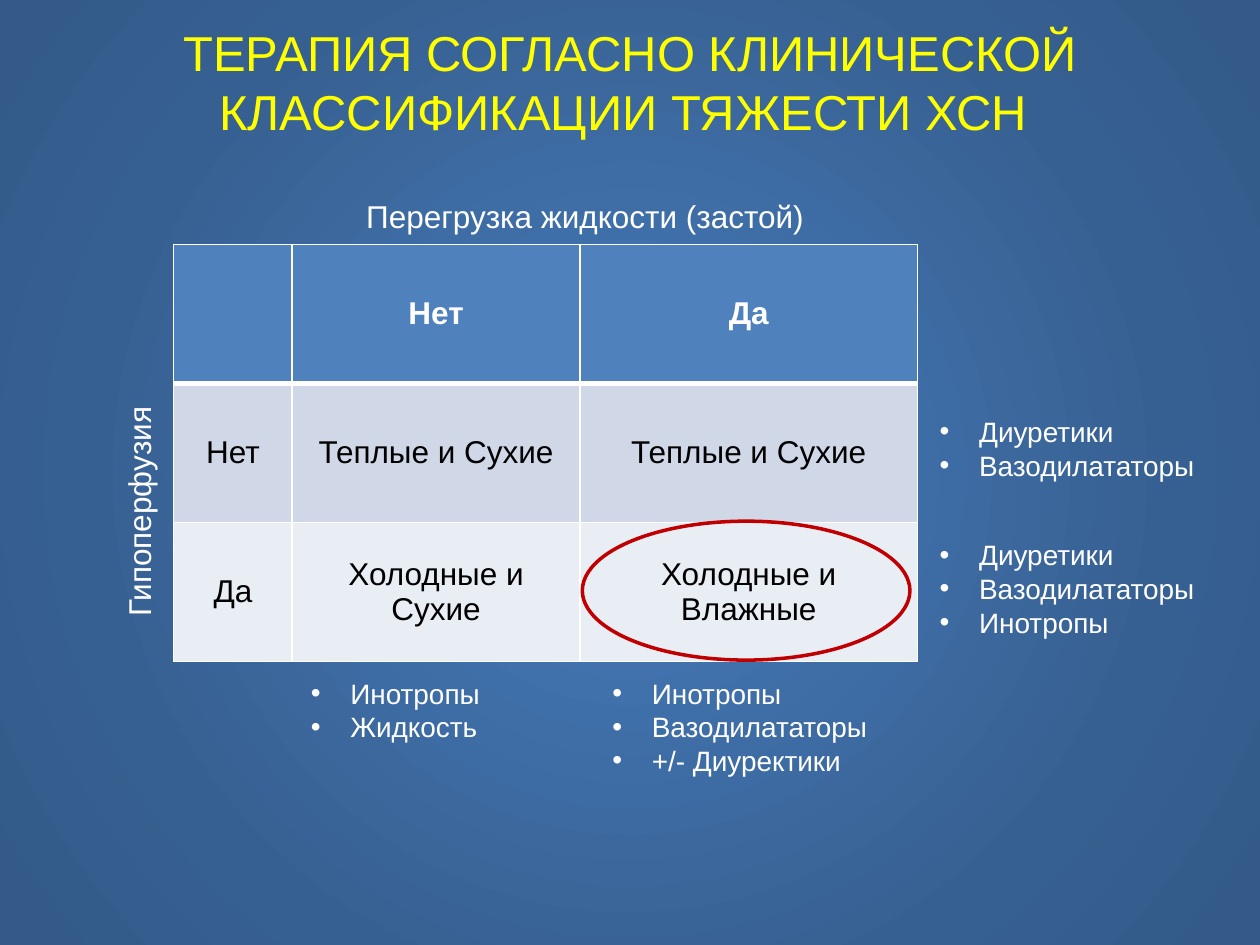
import pptx
import pptx.dml.color
import pptx.enum.shapes
import pptx.enum.text
import pptx.oxml
import pptx.oxml.ns
import pptx.util

Pt = pptx.util.Pt
ALIGN = pptx.enum.text.PP_ALIGN
MIDDLE = pptx.enum.text.MSO_ANCHOR.MIDDLE
NS = pptx.oxml.ns.nsdecls("a")
FONT = "Arial"
WHITE, BLACK, YELLOW, RED = "FFFFFF", "000000", "FFFF00", "C00000"

# Content; boxes are left, top, width, height in points
TITLE = "ТЕРАПИЯ СОГЛАСНО КЛИНИЧЕСКОЙ КЛАССИФИКАЦИИ ТЯЖЕСТИ ХСН "
# text, box, size, colour, rotation
HEADINGS = [
    (TITLE, (36, 21.6, 648, 49.7), 28, YELLOW, 0),
    ("Гипоперфузия", (-56.9, 277.9, 272.2, 29), 18, WHITE, 270),
    ("Перегрузка жидкости (застой)", (127.4, 108.7, 414, 29), 18, WHITE, 0),
]
MATRIX = [
    ["", "Нет", "Да"],
    ["Нет", "Теплые и Сухие", "Теплые и Сухие"],
    ["Да", "Холодные и Сухие", "Холодные и Влажные"],
]
ROW_FILLS = ["4F81BD", "D0D8E8", "E9EDF4"]
COLUMN_WIDTHS = [67.8, 164.4, 193]
ROW_HEIGHT = 79.4
MATRIX_LEFT, MATRIX_TOP = 99.2, 139.7

RIGHT_LEFT, BELOW_TOP = 529.9, 383
THERAPIES = [
    (["Диуретики", "Вазодилататоры"], (RIGHT_LEFT, 233.3, 164.2)),
    (["Диуретики", "Вазодилататоры", "Инотропы"], (RIGHT_LEFT, 303.9, 164.2)),
    (["Инотропы", "Жидкость"], (170.6, BELOW_TOP, 149.8)),
    (["Инотропы", "Вазодилататоры", "+/- Диуректики"], (342.9, BELOW_TOP, 181.4)),
]
BULLET_INDENT = 22.5
LINE_HEIGHT = 19.2
BACKGROUND_STOPS = [(0, "4172AD"), (23, "4172AD"), (69, "376092"), (97, "335A88")]


def rgb(value):
    return pptx.dml.color.RGBColor.from_string(value)


def style(paragraph, size, colour, bold=False, align=ALIGN.CENTER):
    paragraph.alignment = align
    for run in paragraph.runs:
        run.font.name = FONT
        run.font.size = Pt(size)
        run.font.bold = bold
        run.font.color.rgb = rgb(colour)


def add_text(slide, text, box):
    label = slide.shapes.add_textbox(*map(Pt, box))
    label.text_frame.word_wrap = True
    label.text_frame.text = text
    return label


def paint_background(slide):
    slide.background.fill.solid()
    solid = slide.background.fill._xPr.find(pptx.oxml.ns.qn("a:solidFill"))
    stops = "".join(
        f'<a:gs pos="{percent * 1000}"><a:srgbClr val="{colour}"/></a:gs>'
        for percent, colour in BACKGROUND_STOPS
    )
    gradient = pptx.oxml.parse_xml(
        f'<a:gradFill {NS} rotWithShape="1"><a:gsLst>{stops}</a:gsLst>'
        '<a:path path="circle"><a:fillToRect l="50000" t="50000" r="50000" b="50000"/>'
        "</a:path></a:gradFill>"
    )
    solid.getparent().replace(solid, gradient)


def set_borders(cell, widths):
    properties = cell._tc.get_or_add_tcPr()
    for position, (side, width) in enumerate(widths.items()):
        border = pptx.oxml.parse_xml(
            f'<a:ln{side} {NS} w="{Pt(width)}"><a:solidFill>'
            f'<a:srgbClr val="{WHITE}"/></a:solidFill></a:ln{side}>'
        )
        properties.insert(position, border)


def add_matrix(slide):
    table = slide.shapes.add_table(
        len(MATRIX), len(COLUMN_WIDTHS), Pt(MATRIX_LEFT), Pt(MATRIX_TOP),
        Pt(sum(COLUMN_WIDTHS)), Pt(ROW_HEIGHT * len(MATRIX)),
    ).table
    for column, width in zip(table.columns, COLUMN_WIDTHS):
        column.width = Pt(width)
    for r, (texts, fill) in enumerate(zip(MATRIX, ROW_FILLS)):
        table.rows[r].height = Pt(ROW_HEIGHT)
        header = r == 0
        for c, text in enumerate(texts):
            cell = table.cell(r, c)
            cell.text = text
            cell.vertical_anchor = MIDDLE
            cell.fill.solid()
            cell.fill.fore_color.rgb = rgb(fill)
            style(cell.text_frame.paragraphs[0], 18, WHITE if header else BLACK, header)
            # A thick rule separates the header from the body
            set_borders(cell, {"L": 1, "R": 1, "T": 3 if r == 1 else 1, "B": 3 if header else 1})


def add_therapy(slide, drugs, place):
    label = add_text(slide, "\n".join(drugs), (*place, LINE_HEIGHT * len(drugs) + 7.2))
    for paragraph in label.text_frame.paragraphs:
        style(paragraph, 16, WHITE, align=ALIGN.LEFT)
        properties = paragraph._p.get_or_add_pPr()
        properties.set("marL", str(Pt(BULLET_INDENT)))
        properties.set("indent", str(-Pt(BULLET_INDENT)))
        properties.append(pptx.oxml.parse_xml(f'<a:buFont {NS} typeface="{FONT}"/>'))
        properties.append(pptx.oxml.parse_xml(f'<a:buChar {NS} char="•"/>'))


def main():
    deck = pptx.Presentation()
    deck.slide_width, deck.slide_height = Pt(720), Pt(540)
    slide = deck.slides.add_slide(deck.slide_layouts[6])
    paint_background(slide)

    # Title, matrix and axis labels
    add_matrix(slide)
    for text, box, size, colour, rotation in HEADINGS:
        heading = add_text(slide, text, box)
        heading.rotation = rotation
        heading.text_frame.vertical_anchor = MIDDLE
        style(heading.text_frame.paragraphs[0], size, colour)

    # Therapy beside and below the matrix
    for drugs, place in THERAPIES:
        add_therapy(slide, drugs, place)

    # Ring around the cold and wet patients
    ring = slide.shapes.add_shape(
        pptx.enum.shapes.MSO_SHAPE.OVAL, Pt(332.8), Pt(297.8), Pt(187.2), Pt(79.4)
    )
    ring.shadow.inherit = False
    ring.fill.background()
    ring.line.color.rgb = rgb(RED)
    ring.line.width = Pt(2)

    deck.save("out.pptx")


if __name__ == "__main__":
    main()
